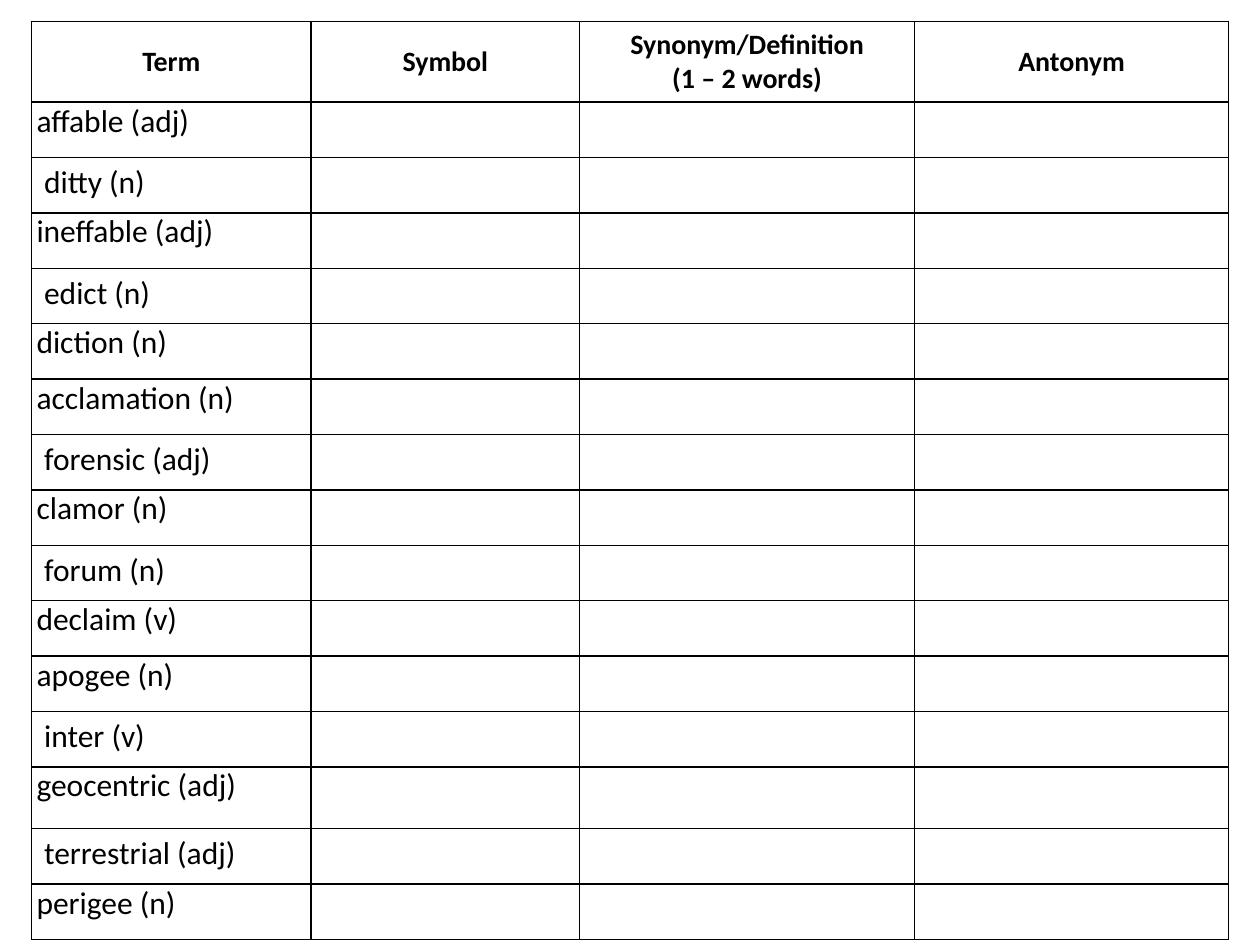
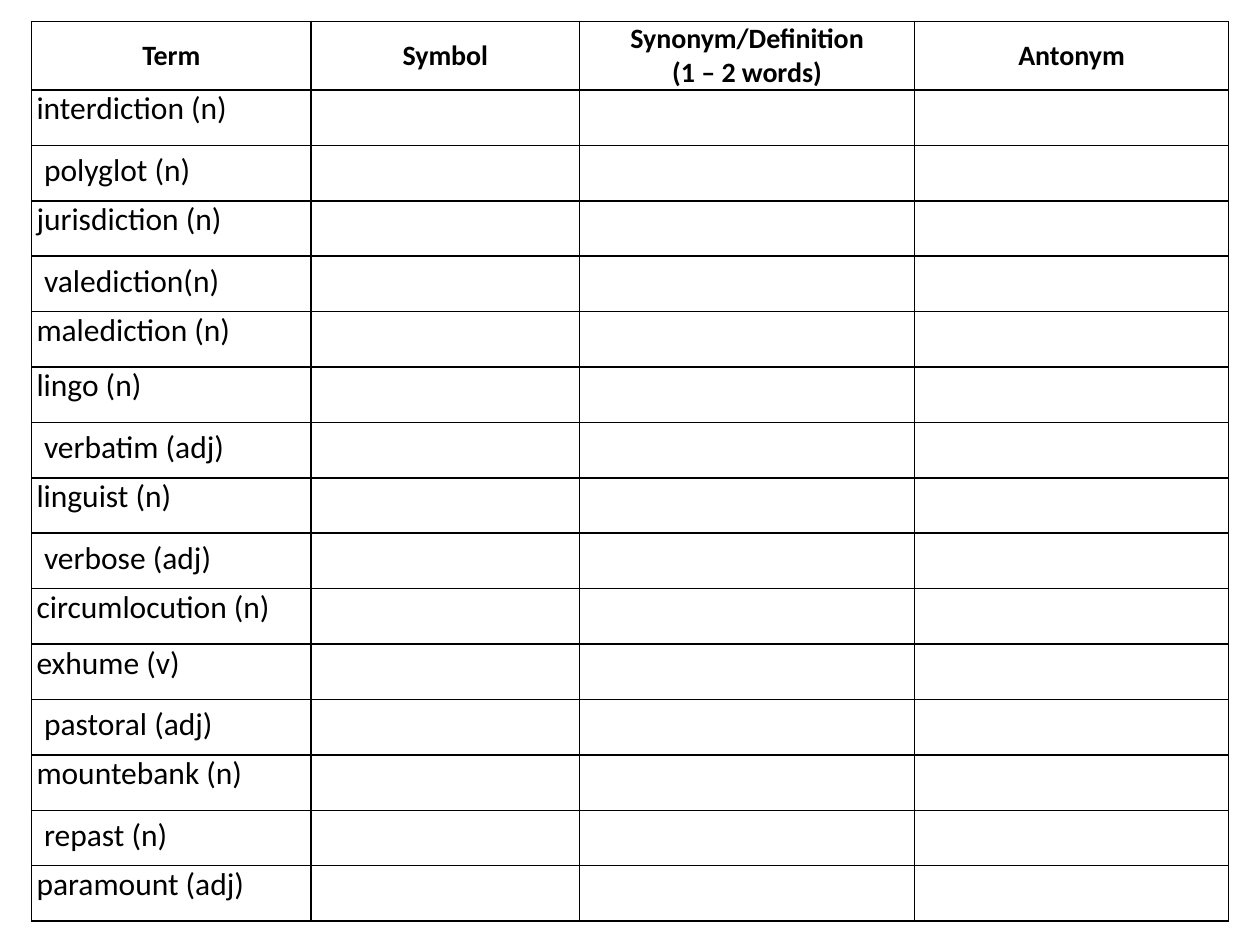
from lxml import etree
from pptx import Presentation
from pptx import util as u
from pptx.dml.color import RGBColor
from pptx.enum import text
from pptx.oxml.ns import qn

HEADINGS = ["Term", "Symbol", "Synonym/Definition\n(1 – 2 words)", "Antonym"]
WORD_LISTS = [
    {
        "header_height": 0.64,
        "tall_rows": {13: 0.49},
        "terms": [
            "affable (adj)", "ditty (n)", "ineffable (adj)", "edict (n)", "diction (n)",
            "acclamation (n)", "forensic (adj)", "clamor (n)", "forum (n)", "declaim (v)",
            "apogee (n)", "inter (v)", "geocentric (adj)", "terrestrial (adj)", "perigee (n)",
        ],
    },
    {
        "header_height": 0.54,
        "tall_rows": {},
        "terms": [
            "interdiction (n)", "polyglot (n)", "jurisdiction (n)", "valediction(n)", "malediction (n)",
            "lingo (n)", "verbatim (adj)", "linguist (n)", "verbose (adj)", "circumlocution (n)",
            "exhume (v)", "pastoral (adj)", "mountebank (n)", "repast (n)", "paramount (adj)",
        ],
    },
]
INDENTED_ROWS = {2, 4, 7, 9, 12, 14}

SLIDE_WIDTH, SLIDE_HEIGHT = 10, 7.5
TABLE_LEFT, TABLE_TOP = 0.25, 0.17
COLUMN_WIDTHS = [2.22, 2.13, 2.66, 2.49]
ROW_HEIGHT = 0.44
INK = "000000"
BORDER_POINTS = 1

HEADER_FONT = {"name": "Calibri", "size": u.Pt(16), "bold": True}
TERM_FONT = {"name": "Calibri", "size": u.Pt(18), "bold": False}
HEADER_CELL = {
    "vertical_anchor": text.MSO_ANCHOR.MIDDLE,
    "margin_left": u.Inches(0.07), "margin_right": u.Inches(0.07),
    "margin_top": 0, "margin_bottom": 0,
}
FLUSH_CELL = {
    "margin_left": u.Inches(0.04), "margin_right": u.Inches(0.04),
    "margin_top": 0, "margin_bottom": 0,
}
PLAIN_TABLE = {"first_row": False, "horz_banding": False}


def color(hex_string):
    return RGBColor.from_string(hex_string)


def apply(target, values):
    for name, value in values.items():
        setattr(target, name, value)


def draw_borders(cell):
    properties = cell._tc.get_or_add_tcPr()
    for side in ("a:lnL", "a:lnR", "a:lnT", "a:lnB"):
        line = etree.SubElement(properties, qn(side), w=str(u.Pt(BORDER_POINTS)))
        fill = etree.SubElement(line, qn("a:solidFill"))
        etree.SubElement(fill, qn("a:srgbClr"), val=INK)


def write(cell, wording, font, cell_format, alignment):
    apply(cell, cell_format)
    cell.text = wording
    for paragraph in cell.text_frame.paragraphs:
        paragraph.alignment = alignment
        for run in paragraph.runs:
            apply(run.font, font)
            run.font.color.rgb = color(INK)


def add_word_table(slide, word_list):
    terms = word_list["terms"]
    heights = [word_list["header_height"]] + [
        word_list["tall_rows"].get(row, ROW_HEIGHT) for row in range(1, len(terms) + 1)
    ]
    table = slide.shapes.add_table(
        len(heights), len(COLUMN_WIDTHS), u.Inches(TABLE_LEFT), u.Inches(TABLE_TOP),
        u.Inches(sum(COLUMN_WIDTHS)), u.Inches(sum(heights)),
    ).table
    apply(table, PLAIN_TABLE)
    for column, width in zip(table.columns, COLUMN_WIDTHS):
        column.width = u.Inches(width)
    for row, height in zip(table.rows, heights):
        row.height = u.Inches(height)
    for cell in table.iter_cells():
        draw_borders(cell)
        cell.fill.background()
    for column, heading in enumerate(HEADINGS):
        write(table.cell(0, column), heading, HEADER_FONT, HEADER_CELL, text.PP_ALIGN.CENTER)
    for row, term in enumerate(terms, start=1):
        cell_format = {} if row in INDENTED_ROWS else FLUSH_CELL
        write(table.cell(row, 0), term, TERM_FONT, cell_format, text.PP_ALIGN.LEFT)


def main():
    presentation = Presentation()
    presentation.slide_width = u.Inches(SLIDE_WIDTH)
    presentation.slide_height = u.Inches(SLIDE_HEIGHT)
    for word_list in WORD_LISTS:
        slide = presentation.slides.add_slide(presentation.slide_layouts[6])
        add_word_table(slide, word_list)
    presentation.save("out.pptx")


if __name__ == "__main__":
    main()
